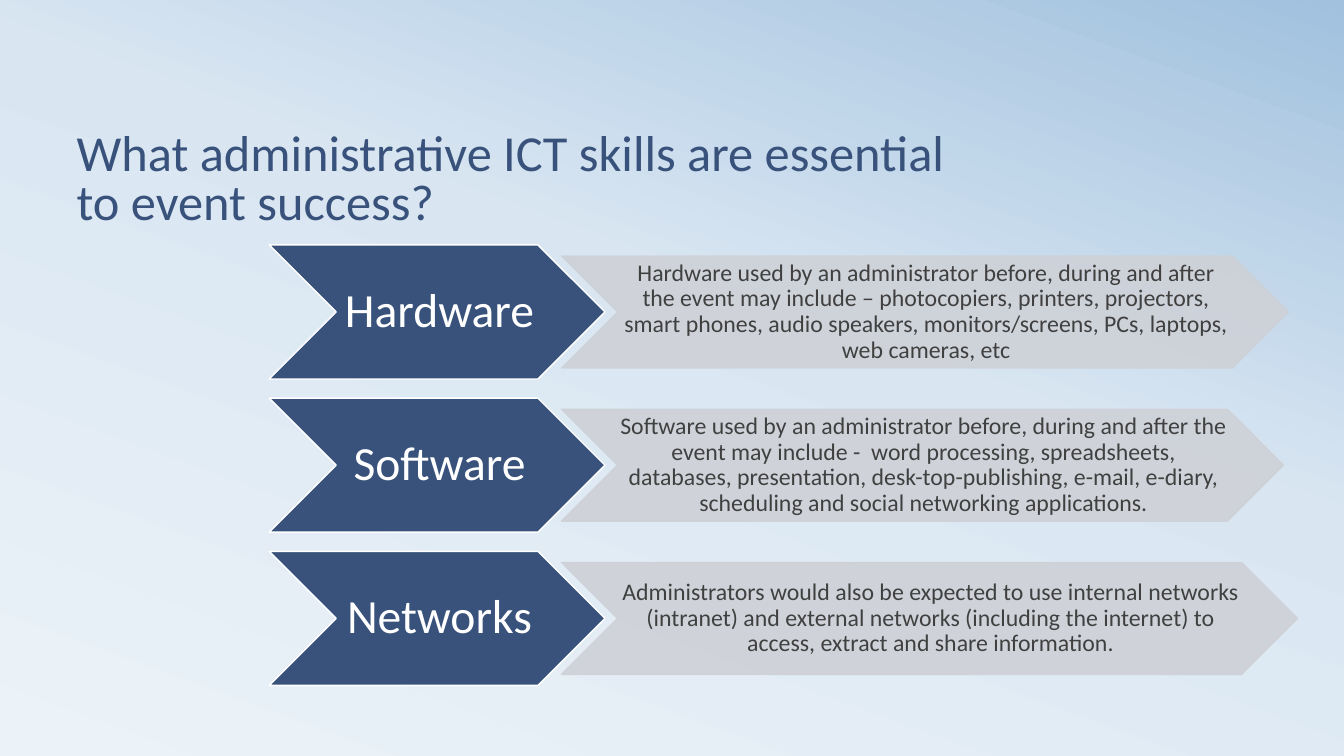
from copy import deepcopy

from lxml import etree
from pptx import Presentation
from pptx.dml.color import RGBColor
from pptx.enum.shapes import MSO_SHAPE
from pptx.enum.text import MSO_ANCHOR, MSO_AUTO_SIZE, PP_ALIGN
from pptx.oxml.ns import qn
from pptx.util import Inches, Pt

CHEVRON = MSO_SHAPE.CHEVRON
LEFT, CENTER = PP_ALIGN.LEFT, PP_ALIGN.CENTER
MIDDLE, BOTTOM = MSO_ANCHOR.MIDDLE, MSO_ANCHOR.BOTTOM
NO_FIT = MSO_AUTO_SIZE.NONE

NAVY, GREY, WHITE, TEXT = "39527B", "CED1D7", "FFFFFF", "404040"
SKY = [(0, "ECF3F8"), (0.58, "D9E6F2"), (1, "A1C1DE")]

# Row grid, in inches
TOP, PITCH = 2.43, 1.52
LABEL_X, LABEL_W, LABEL_H = 2.67, 3.33, 1.33
DETAIL_X, DETAIL_H = 5.57, 1.11

SKILLS = [
    ("Hardware", 7.21,
     "Hardware used by an administrator before, during and after the event may "
     "include – photocopiers, printers, projectors, smart phones, audio speakers, "
     "monitors/screens, PCs, laptops, web cameras, etc"),
    ("Software", 7.16,
     "Software used by an administrator before, during and after the event may "
     "include -  word processing, spreadsheets, databases, presentation, "
     "desk-top-publishing, e-mail, e-diary, scheduling and social networking "
     "applications."),
    ("Networks", 7.3,
     "Administrators would also be expected to use internal networks (intranet) "
     "and external networks (including the internet) to access, extract and share "
     "information."),
]


def rgb(color):
    return RGBColor.from_string(color)


def set_all(target, values):
    for name, value in values.items():
        setattr(target, name, value)


class Deck:
    font = "Calibri"

    def __init__(self, width, height):
        self.prs = Presentation()
        self.prs.slide_width, self.prs.slide_height = Inches(width), Inches(height)
        self.s = self.prs.slides.add_slide(self.prs.slide_layouts[5])

    def background(self, stops, angle):
        fill = self.s.background.fill
        fill.gradient()
        fill.gradient_angle = angle
        first = fill.gradient_stops[0]._gs
        first.addnext(deepcopy(first))
        for stop, (position, color) in zip(fill.gradient_stops, stops):
            stop.position = position
            stop.color.rgb = rgb(color)

    def add_text(self, sp, lines, size, color, align, anchor, spacing, insets=None):
        tf = sp.text_frame
        set_all(tf, {"word_wrap": True, "auto_size": NO_FIT, "vertical_anchor": anchor})
        for side, inset in (insets or {}).items():
            setattr(tf, "margin_" + side, Inches(inset))
        p = tf.paragraphs[0]
        set_all(p, {"alignment": align, "line_spacing": spacing})
        for i, line in enumerate(lines):
            if i:
                p.add_line_break()
            r = p.add_run()
            r.text = line
            set_all(r.font, {"name": self.font, "size": Pt(size)})
            r.font.color.rgb = rgb(color)

    def title(self, lines, x, y, w, h):
        sp = self.s.shapes.title
        set_all(sp, {"left": Inches(x), "top": Inches(y),
                     "width": Inches(w), "height": Inches(h)})
        self.add_text(sp, lines, 36, NAVY, LEFT, BOTTOM, 0.8)

    def chevron(self, x, y, w, h, fill, line, text, size, color, insets, alpha=100):
        sp = self.s.shapes.add_shape(CHEVRON, Inches(x), Inches(y), Inches(w), Inches(h))
        sp.shadow.inherit = False
        sp.fill.solid()
        sp.fill.fore_color.rgb = rgb(fill)
        sp.line.color.rgb = rgb(line)
        sp.line.width = Pt(1)
        if alpha < 100:
            for clr in sp._element.spPr.iter(qn("a:srgbClr")):
                etree.SubElement(clr, qn("a:alpha")).set("val", str(alpha * 1000))
        self.add_text(sp, [text], size, color, CENTER, MIDDLE, 0.9, insets)


def main():
    deck = Deck(13.33, 7.5)
    deck.background(SKY, 70)
    deck.title(["What administrative ICT skills are essential", "to event success?"],
               0.66, 0.75, 12.42, 1.58)

    label_insets = {"left": 0.05, "top": 0.02, "right": 0, "bottom": 0.02}
    detail_insets = {"left": 0.02, "top": 0.01, "right": 0, "bottom": 0.01}

    # One label and one explanation per row
    for row, (label, detail_w, detail) in enumerate(SKILLS):
        y = TOP + row * PITCH
        deck.chevron(LABEL_X, y, LABEL_W, LABEL_H, NAVY, WHITE,
                     label, 34, WHITE, label_insets)
        deck.chevron(DETAIL_X, y + (LABEL_H - DETAIL_H) / 2, detail_w, DETAIL_H,
                     GREY, GREY, detail, 17, TEXT, detail_insets, alpha=90)

    deck.prs.save("out.pptx")


if __name__ == "__main__":
    main()
